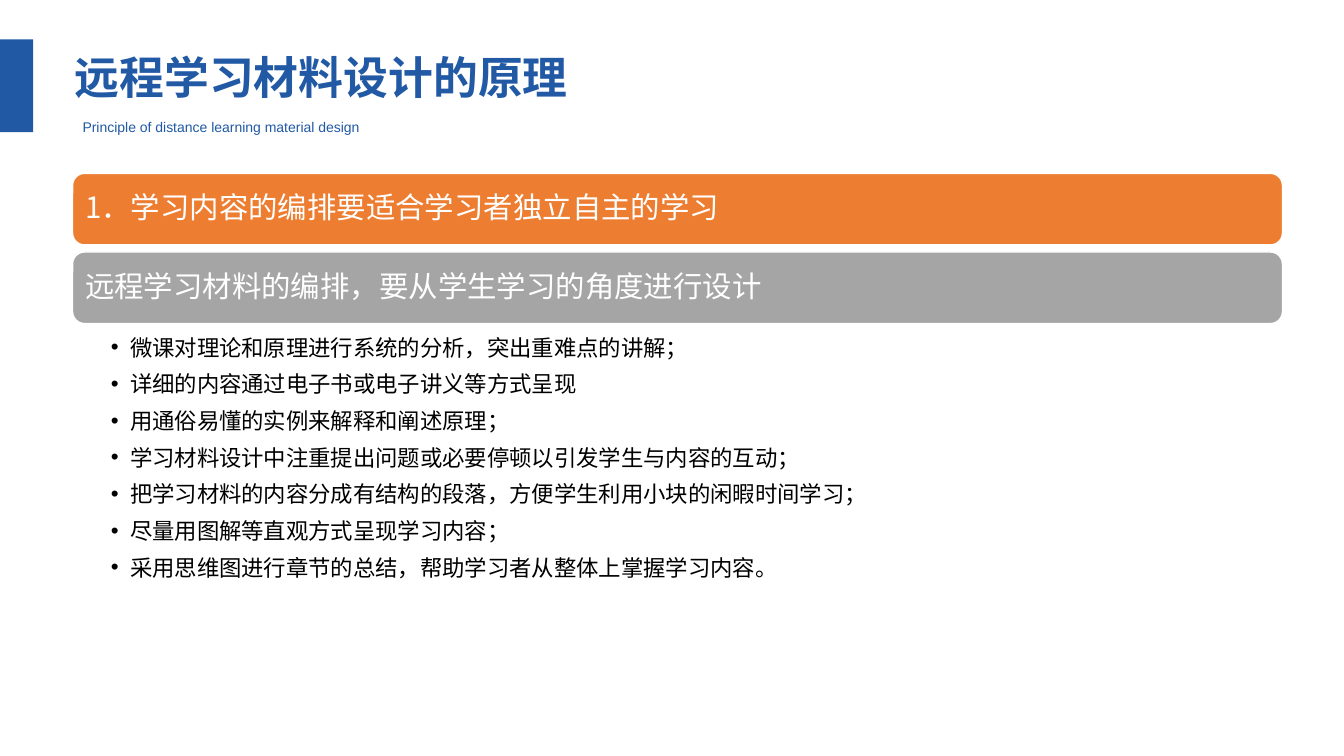
import pptx
import pptx.dml.color
import pptx.enum.shapes
import pptx.enum.text
import pptx.oxml
import pptx.oxml.ns
import pptx.util

PX = 9144  # EMU per px, 100 px to the inch
COLORS = {"blue": "2159A5", "orange": "ED7D31", "grey": "A5A5A5",
          "white": "FFFFFF", "black": "000000"}
CJK = "Noto Sans CJK SC"
LEFT, CARD_WIDTH, CARD_HEIGHT = 72, 1200, 71
CARD_TOP, CARD_PITCH = 172, 78

CARDS = [
    ("1．学习内容的编排要适合学习者独立自主的学习", "orange"),
    ("远程学习材料的编排，要从学生学习的角度进行设计", "grey"),
]
METHODS = [
    "微课对理论和原理进行系统的分析，突出重难点的讲解；",
    "详细的内容通过电子书或电子讲义等方式呈现",
    "用通俗易懂的实例来解释和阐述原理；",
    "学习材料设计中注重提出问题或必要停顿以引发学生与内容的互动；",
    "把学习材料的内容分成有结构的段落，方便学生利用小块的闲暇时间学习；",
    "尽量用图解等直观方式呈现学习内容；",
    "采用思维图进行章节的总结，帮助学习者从整体上掌握学习内容。",
]


def px(*lengths):
    return [pptx.util.Emu(length * PX) for length in lengths]


def rgb(name):
    return pptx.dml.color.RGBColor.from_string(COLORS[name])


def add_run(paragraph, text, size, color, font=CJK, bold=False):
    run = paragraph.add_run()
    run.text = text
    run.font.size = pptx.util.Pt(size)
    run.font.name = font
    run.font.bold = bold
    run.font.color.rgb = rgb(color)
    east_asian = pptx.oxml.parse_xml(
        f'<a:ea {pptx.oxml.ns.nsdecls("a")} typeface="{font}"/>')
    run.font._element.find(pptx.oxml.ns.qn("a:latin")).addnext(east_asian)


def add_block(slide, preset, box, fill):
    block = slide.shapes.add_shape(preset, *px(*box))
    block.shadow.inherit = False
    block.fill.solid()
    block.fill.fore_color.rgb = rgb(fill)
    block.line.fill.background()
    return block


def add_card(slide, top, text, fill):
    card = add_block(slide, pptx.enum.shapes.MSO_SHAPE.ROUNDED_RECTANGLE,
                     (LEFT, top, CARD_WIDTH, CARD_HEIGHT), fill)
    card.line.color.rgb = rgb("white")
    card.line.width = pptx.util.Pt(1)
    frame = card.text_frame
    frame.margin_left, frame.margin_right = px(9, 9)
    frame.vertical_anchor = pptx.enum.text.MSO_ANCHOR.MIDDLE
    heading = frame.paragraphs[0]
    heading.alignment = pptx.enum.text.PP_ALIGN.LEFT
    heading.line_spacing = 0.9
    add_run(heading, text, 21, "white")


def add_text_frame(slide, box):
    frame = slide.shapes.add_textbox(*px(*box)).text_frame
    frame.word_wrap = True
    return frame


def add_bullet(paragraph, text):
    paragraph.level = 1
    paragraph.line_spacing = pptx.util.Pt(23)
    paragraph.space_after = pptx.util.Pt(3.2)
    properties = paragraph._p.get_or_add_pPr()
    properties.set("marL", str(19 * PX))
    properties.set("indent", str(-19 * PX))
    for bullet in ('<a:buFont {} typeface="Arial"/>', '<a:buChar {} char="•"/>'):
        properties.append(pptx.oxml.parse_xml(
            bullet.format(pptx.oxml.ns.nsdecls("a"))))
    add_run(paragraph, text, 16, "black")


def add_title(slide, text):
    title = slide.shapes.title
    title.left, title.top, title.width, title.height = px(64, 44, 521, 64)
    frame = title.text_frame
    frame.word_wrap = True
    frame.vertical_anchor = pptx.enum.text.MSO_ANCHOR.MIDDLE
    frame.paragraphs[0].alignment = pptx.enum.text.PP_ALIGN.LEFT
    add_run(frame.paragraphs[0], text, 32, "blue", bold=True)


def main():
    deck = pptx.Presentation()
    deck.slide_width, deck.slide_height = px(1333, 750)
    slide = deck.slides.add_slide(deck.slide_layouts[5])

    # Header
    add_block(slide, pptx.enum.shapes.MSO_SHAPE.RECTANGLE, (-2, 39, 35, 92), "blue")
    add_title(slide, "远程学习材料设计的原理")
    subtitle = add_text_frame(slide, (72, 96, 502, 44)).paragraphs[0]
    subtitle.alignment = pptx.enum.text.PP_ALIGN.JUSTIFY
    subtitle.line_spacing = 2.0
    add_run(subtitle, "Principle of distance learning material design",
            10, "blue", "Arial")

    # Heading cards
    for index, (text, fill) in enumerate(CARDS):
        add_card(slide, CARD_TOP + index * CARD_PITCH, text, fill)

    # Methods list
    methods = add_text_frame(slide, (LEFT, 321, CARD_WIDTH, 371))
    methods.margin_left, methods.margin_top, methods.margin_right = px(38, 5, 16)
    for index, text in enumerate(METHODS):
        add_bullet(methods.add_paragraph() if index else methods.paragraphs[0], text)

    deck.save("out.pptx")


if __name__ == "__main__":
    main()
